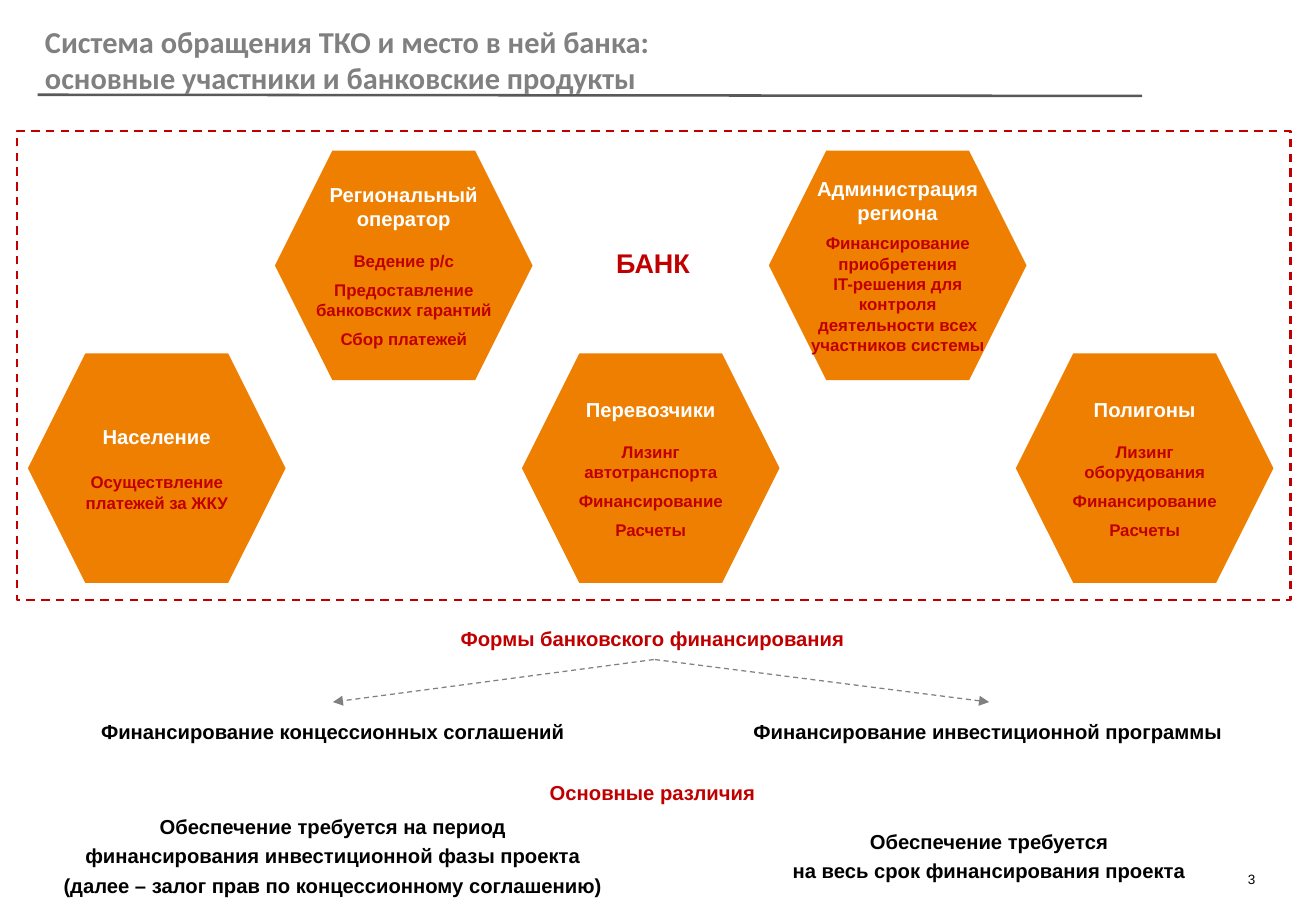
from pptx import Presentation
from pptx import util as u
from pptx.dml.color import RGBColor
from pptx.enum import dml, shapes, text
from pptx.oxml.ns import qn

PX = 9144  # EMU, 100 px to the inch
RED, ORANGE, GREY, BLACK, WHITE = "C00000", "EE7F00", "808080", "000000", "FFFFFF"
CENTER = text.PP_ALIGN.CENTER


def color(value):
    return RGBColor.from_string(value)


def write(shape, lines, size=12, fill=BLACK, bold=True, font="Arial", align=CENTER,
          anchor=text.MSO_ANCHOR.MIDDLE, after=0, before=(), heading=None):
    """Fill a shape with paragraphs; a heading gets its own 12 pt white style."""
    frame = shape.text_frame
    frame.word_wrap = True
    frame.vertical_anchor = anchor
    paras = ([heading] if heading else []) + lines
    for index, line in enumerate(paras):
        para = frame.paragraphs[0] if index == 0 else frame.add_paragraph()
        para.text = line
        para.alignment = align
        para.space_after = u.Pt(after)
        para.space_before = u.Pt(before[index - 1] if before and index else 0)
        is_heading = heading is not None and index == 0
        para.font.size = u.Pt(12 if is_heading else size)
        para.font.bold = bold
        para.font.name = font
        para.font.color.rgb = color(WHITE if is_heading else fill)


deck = Presentation()
deck.slide_width, deck.slide_height = 1083 * PX, 750 * PX
page = deck.slides.add_slide(deck.slide_layouts[5])

# Title
title = page.shapes.title
title.left, title.top, title.width, title.height = [n * PX for n in (27, 14, 847, 71)]
write(title, ["Система обращения ТКО и место в ней банка:",
              "основные участники и банковские продукты"],
      size=18, fill=GREY, font="Calibri", align=text.PP_ALIGN.LEFT,
      anchor=text.MSO_ANCHOR.TOP)
title.text_frame.auto_size = text.MSO_AUTO_SIZE.SHAPE_TO_FIT_TEXT

# Participants, in two staggered rows
HIGH, LOW = 124, 291
STEP = 203.25
participants = [
    (0, LOW, "Население", ["Осуществление платежей за ЖКУ"], [14]),
    (1, HIGH, "Региональный оператор",
     ["Ведение р/с", "Предоставление банковских гарантий", "Сбор платежей"], [12, 5, 5]),
    (2, LOW, "Перевозчики",
     ["Лизинг автотранспорта", "Финансирование", "Расчеты"], [12, 5, 5]),
    (3, HIGH, "Администрация региона",
     ["Финансирование приобретения\vIT-решения для контроля деятельности "
      "всех участников системы"], [5]),
    (4, LOW, "Полигоны",
     ["Лизинг оборудования", "Финансирование", "Расчеты"], [12, 5, 5]),
]
for column, top, name, products, gaps in participants:
    hexagon = page.shapes.add_shape(shapes.MSO_SHAPE.HEXAGON, round((23 + column * STEP) * PX),
                                    top * PX, 212 * PX, 189 * PX)
    hexagon.shadow.inherit = False
    hexagon.fill.solid()
    hexagon.fill.fore_color.rgb = color(ORANGE)
    hexagon.line.fill.background()
    hexagon.text_frame.margin_left = hexagon.text_frame.margin_right = 0
    write(hexagon, products, size=10, fill=RED, heading=name, before=gaps)

bank = page.shapes.add_shape(shapes.MSO_SHAPE.HEXAGON, 436 * PX, 128 * PX, 203 * PX, 177 * PX)
frame = page.shapes.add_shape(shapes.MSO_SHAPE.RECTANGLE, 14 * PX, 108 * PX, 1048 * PX, 386 * PX)
for outline in (bank, frame):
    outline.shadow.inherit = False
    outline.fill.background()
bank.line.fill.background()
bank.text_frame.margin_left = bank.text_frame.margin_right = 0
write(bank, ["БАНК"], size=16, fill=RED)
frame.line.color.rgb = color(RED)
frame.line.width = u.Pt(1.25)
frame.line.dash_style = dml.MSO_LINE.DASH

# Forms of financing and their differences
captions = [
    (302, 494, RED, ["Формы банковского финансирования"]),
    (39, 571, BLACK, ["Финансирование концессионных соглашений"]),
    (578, 571, BLACK, ["Финансирование инвестиционной программы"]),
    (302, 621, RED, ["Основные различия"]),
    (39, 673, BLACK, ["Обеспечение требуется на период",
                      "финансирования инвестиционной фазы проекта",
                      "(далее – залог прав по концессионному соглашению)"]),
    (579, 673, BLACK, ["Обеспечение требуется",
                       "на весь срок финансирования проекта"]),
]
for left, top, fill, lines in captions:
    caption = page.shapes.add_textbox(left * PX, top * PX, 470 * PX, 63 * PX)
    write(caption, lines, fill=fill, after=3)

number = page.shapes.add_textbox(810 * PX, 698 * PX, 233 * PX, 52 * PX)
write(number, ["3"], size=8, bold=False, align=text.PP_ALIGN.RIGHT)

# Title rule and the two branching arrows
for ends, stroke, width, is_arrow in [
    ((31, 78, 940, 79), "595959", 1.5, False),
    ((538, 543, 274, 578), GREY, 0.75, True),
    ((539, 543, 814, 578), GREY, 0.75, True),
]:
    line = page.shapes.add_connector(shapes.MSO_CONNECTOR.STRAIGHT, *[n * PX for n in ends])
    line.line.color.rgb = color(stroke)
    line.line.width = u.Pt(width)
    properties = line._element.spPr
    if is_arrow:
        line.line.dash_style = dml.MSO_LINE.DASH
        tail = properties.find(qn("a:ln")).makeelement(qn("a:tailEnd"), {"type": "triangle"})
        properties.find(qn("a:ln")).append(tail)
    properties.append(properties.makeelement(qn("a:effectLst"), {}))

deck.save("out.pptx")
